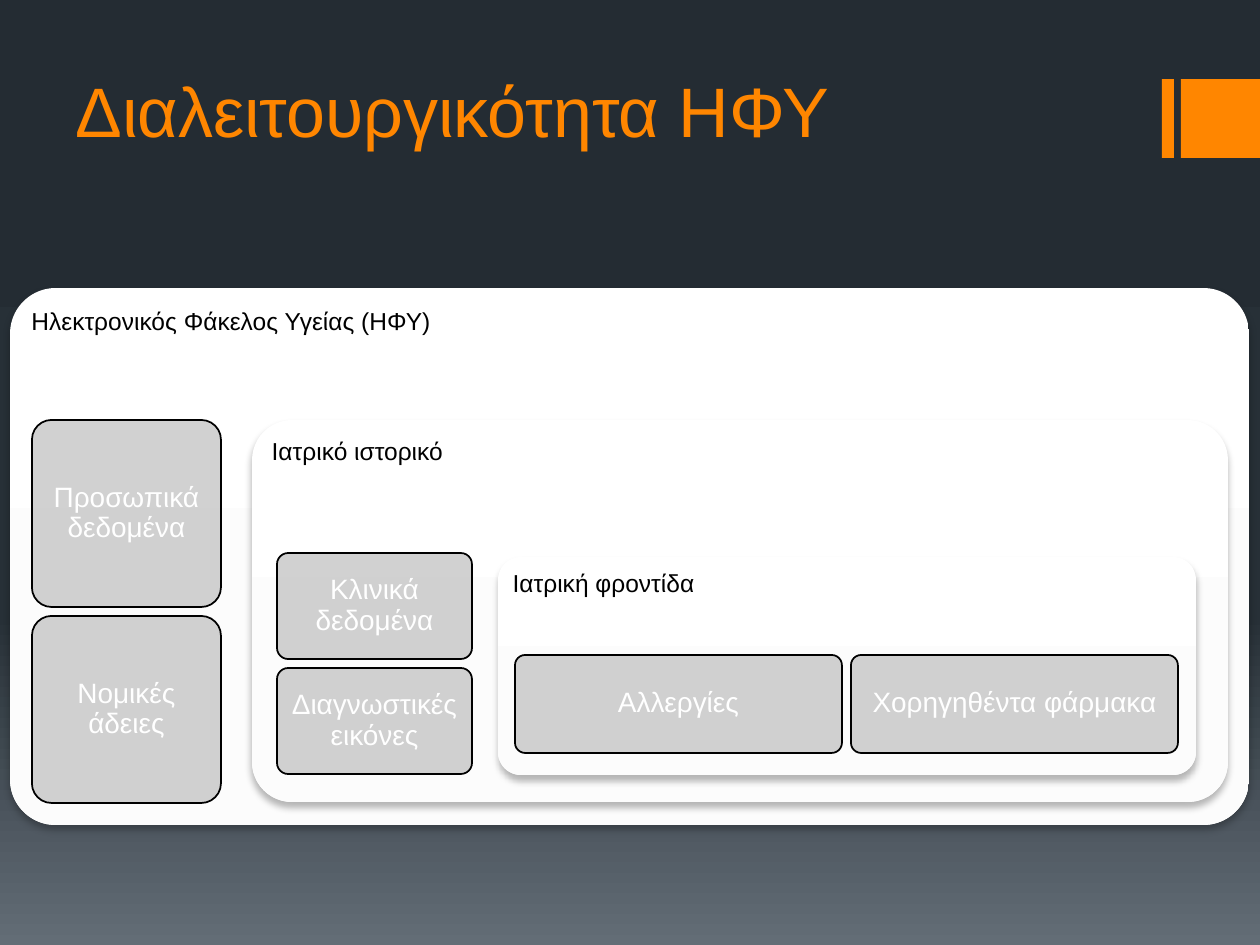
from lxml import etree
from pptx import Presentation
from pptx.dml.color import RGBColor
from pptx.enum.shapes import MSO_SHAPE
from pptx.enum.text import MSO_ANCHOR, PP_ALIGN
from pptx.oxml.ns import qn
from pptx.util import Pt

PX = 914400 / 126
RECTANGLE, ROUNDED = MSO_SHAPE.RECTANGLE, MSO_SHAPE.ROUNDED_RECTANGLE
TOP, MIDDLE, BOTTOM = MSO_ANCHOR.TOP, MSO_ANCHOR.MIDDLE, MSO_ANCHOR.BOTTOM
LEFT, CENTER = PP_ALIGN.LEFT, PP_ALIGN.CENTER
FONT = "Arial"
CARD_GAP = 9
COLORS = {"accent": "FF8600", "card": "CCCCCC", "black": "000000", "white": "FFFFFF",
          "panel": "FCFCFC", "night": "242C33", "slate": "273037", "mist": "636D76"}
PAGE_STOPS = [(0, "night"), (65, "slate"), (100, "mist")]
PANEL_STOPS = [(0, "white"), (41, "panel"), (100, "white")]


def px(length):
    return round(length * PX)


def color(name):
    return RGBColor.from_string(COLORS[name])


def add_child(parent, tag, **attributes):
    child = etree.SubElement(parent, qn(tag))
    for key, value in attributes.items():
        child.set(key, str(value))
    return child


def fill_gradient(owner, fill, stops):
    """Fill from top to bottom with stops of (percent, colour name)."""
    fill.gradient()
    fill.gradient_angle = 270
    stop_list = owner._element.xpath(".//a:gsLst")[0]
    for stop in list(stop_list):
        stop_list.remove(stop)
    for percent, name in stops:
        stop = add_child(stop_list, "a:gs", pos=percent * 1000)
        add_child(stop, "a:srgbClr", val=COLORS[name])


def add_block(page, kind, box, radius=None):
    block = page.shapes.add_shape(kind, *map(px, box))
    block.shadow.inherit = False
    block.line.fill.background()
    if radius is not None:
        block.adjustments[0] = radius
    return block


def write(shape, text, size, name, align, anchor, inset=None, spacing=None):
    frame = shape.text_frame
    frame.word_wrap = True
    frame.vertical_anchor = anchor
    if inset is not None:
        frame.margin_left = frame.margin_right = px(inset)
        frame.margin_top = frame.margin_bottom = px(inset)
    para = frame.paragraphs[0]
    para.text = text
    para.alignment = align
    para.line_spacing = spacing
    para.font.name = FONT
    para.font.size = Pt(size)
    para.font.color.rgb = color(name)


def add_header(page, box, title):
    left, top, width, height = box
    # Accent bars at the right edge
    for bar_left, bar_width in ((1162, 12), (1181, 79)):
        bar = add_block(page, RECTANGLE, (left + bar_left, top + 79, bar_width, 79))
        bar.fill.solid()
        bar.fill.fore_color.rgb = color("accent")
    # Title
    title_box = page.shapes.add_textbox(px(left + 63), px(top), px(width - 189), px(height))
    write(title_box, title, 40, "accent", LEFT, BOTTOM)


def add_card(page, box, text):
    card = add_block(page, ROUNDED, box, 0.105)
    card.fill.solid()
    card.fill.fore_color.rgb = color("card")
    add_child(card._element.xpath("./p:spPr/a:solidFill/a:srgbClr")[0], "a:alpha", val=90000)
    card.line.color.rgb = color("black")
    card.line.width = Pt(1)
    write(card, text, 16, "white", CENTER, MIDDLE, 9, 0.9)


def add_panel(page, box, radius, heading, first_card, cards, across=False):
    """Panel with a heading and equal cards; first_card is relative to the panel."""
    panel = add_block(page, ROUNDED, box, radius)
    fill_gradient(panel, panel.fill, PANEL_STOPS)
    shadow = add_child(panel._element.spPr.find(qn("a:effectLst")), "a:outerShdw",
                       blurRad=Pt(4), dist=Pt(3), dir=5400000, rotWithShape=0)
    shade = add_child(shadow, "a:srgbClr", val=COLORS["black"])
    add_child(shade, "a:alpha", val=28000)
    write(panel, heading, 14, "black", LEFT, TOP, 8, 0.9)

    left, top, width, height = first_card
    step_x, step_y = (width + CARD_GAP, 0) if across else (0, height + CARD_GAP)
    for index, text in enumerate(cards):
        add_card(page, (box[0] + left + index * step_x, box[1] + top + index * step_y,
                        width, height), text)


def main():
    deck = Presentation()
    deck.slide_width, deck.slide_height = px(1260), px(945)
    page = deck.slides.add_slide(deck.slide_layouts[6])
    fill_gradient(page, page.background.fill, PAGE_STOPS)

    add_header(page, (0, 0, 1260, 158), "Διαλειτουργικότητα ΗΦΥ")
    # Nested panels, from the outermost in
    add_panel(page, (10, 288, 1239, 537), 0.085, "Ηλεκτρονικός Φάκελος Υγείας (ΗΦΥ)",
              (22, 132, 189, 187), ["Προσωπικά δεδομένα", "Νομικές άδειες"])
    add_panel(page, (252, 420, 976, 382), 0.105, "Ιατρικό ιστορικό",
              (25, 133, 195, 106), ["Κλινικά δεδομένα", "Διαγνωστικές εικόνες"])
    add_panel(page, (498, 557, 698, 218), 0.105, "Ιατρική φροντίδα",
              (17, 98, 327, 98), ["Αλλεργίες", "Χορηγηθέντα φάρμακα"], across=True)
    deck.save("out.pptx")


if __name__ == "__main__":
    main()
